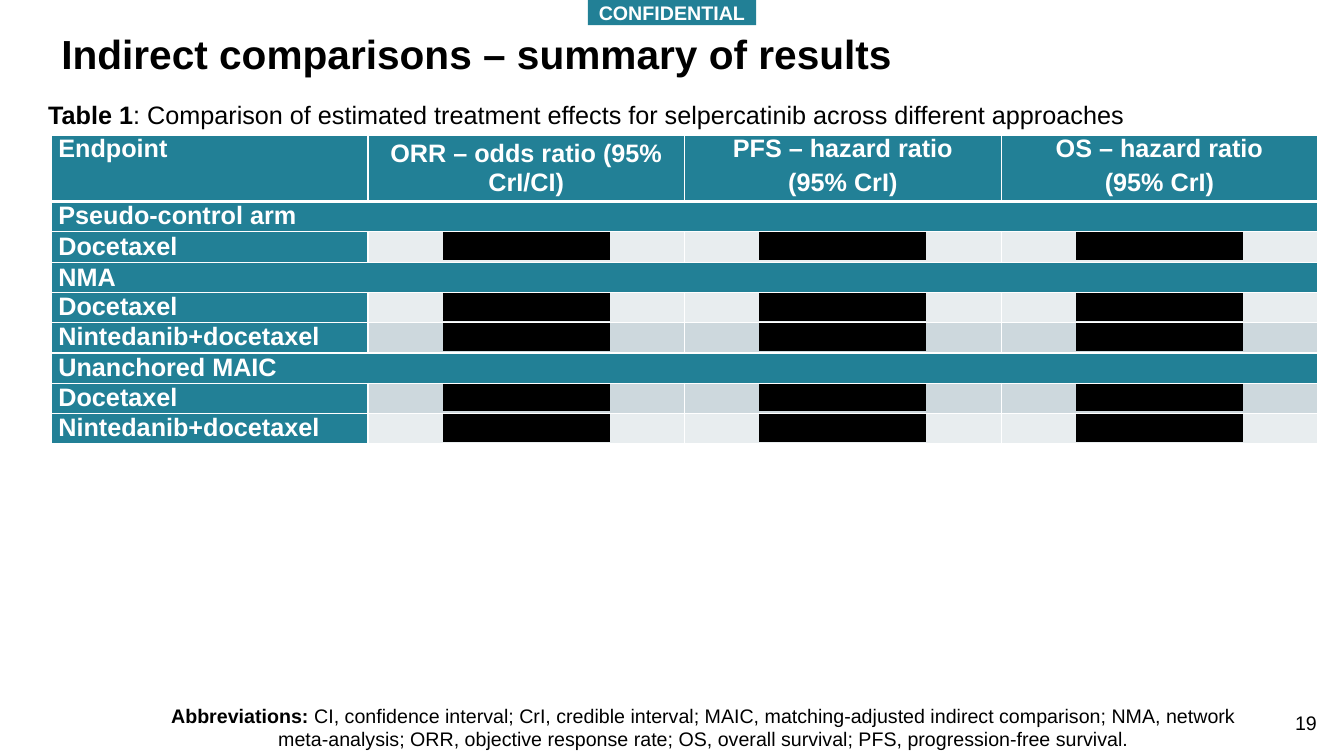
from dataclasses import dataclass

from lxml import etree
from pptx import Presentation
from pptx import util as u
from pptx.dml import color
from pptx.enum import shapes, text
from pptx.oxml import ns

COLORS = {
    "teal": "228096",
    "pale": "E8EDEF",
    "grey": "CDD8DD",
    "white": "FFFFFF",
    "black": "000000",
}
REDACTED = "*" * 17
ALIGN = text.PP_ALIGN
ANCHOR = text.MSO_ANCHOR


@dataclass
class Label:
    spans: list[tuple[str, bool]]
    left: float
    top: float
    width: float
    height: float
    size: float
    align: ALIGN = ALIGN.LEFT
    line_spacing: float = 1.0


@dataclass
class Row:
    heading: str
    band: str | None = None
    anchor: ANCHOR = ANCHOR.TOP


LABELS = [
    Label([("19", False)], 12.65, 7, 0.51, 0.4, 14, ALIGN.RIGHT),
    Label([("Indirect comparisons – summary of results", True)],
          0.51, 0.29, 12.3, 0.65, 29, line_spacing=0.9),
    Label([("Table 1", True),
           (": Comparison of estimated treatment effects for selpercatinib "
            "across different approaches", False)],
          0.38, 0.94, 12.83, 0.4, 18),
    Label([("Abbreviations: ", True),
           ("CI, confidence interval; CrI, credible interval; MAIC, matching-adjusted "
            "indirect comparison; NMA, network meta-analysis; ORR, objective response "
            "rate; OS, overall survival; PFS, progression-free survival.", False)],
          1.39, 6.93, 11.18, 0.57, 14, ALIGN.CENTER),
]
HEADERS = [
    ["Endpoint"],
    ["ORR – odds ratio (95% CrI/CI)"],
    ["PFS – hazard ratio", "(95% CrI)"],
    ["OS – hazard ratio", "(95% CrI)"],
]
ROWS = [
    Row("Pseudo-control arm"),
    Row("Docetaxel", "pale", ANCHOR.MIDDLE),
    Row("NMA", anchor=ANCHOR.MIDDLE),
    Row("Docetaxel", "pale"),
    Row("Nintedanib+docetaxel", "grey"),
    Row("Unanchored MAIC", anchor=ANCHOR.MIDDLE),
    Row("Docetaxel", "grey"),
    Row("Nintedanib+docetaxel", "pale"),
]


def rgb(name: str) -> color.RGBColor:
    return color.RGBColor.from_string(COLORS[name])


def add_span(para, words: str, *, size: float = 18, ink: str = "white",
             bold: bool = True, underline: bool = False,
             highlight: str | None = None) -> None:
    span = para.add_run()
    span.text = words
    font = span.font
    font.name, font.size, font.bold = "Arial", u.Pt(size), bold
    font.color.rgb = rgb(ink)
    if underline:
        font.underline = True
    if highlight:
        mark = etree.Element(ns.qn("a:highlight"))
        etree.SubElement(mark, ns.qn("a:srgbClr"), val=COLORS[highlight])
        span._r.get_or_add_rPr().find(ns.qn("a:solidFill")).addnext(mark)


def add_label(page, label: Label) -> None:
    box = page.shapes.add_textbox(u.Inches(label.left), u.Inches(label.top),
                                  u.Inches(label.width), u.Inches(label.height))
    box.text_frame.word_wrap = True
    para = box.text_frame.paragraphs[0]
    para.alignment = label.align
    para.line_spacing = label.line_spacing
    for words, bold in label.spans:
        add_span(para, words, size=label.size, ink="black", bold=bold)


def add_banner(page) -> None:
    box = page.shapes.add_shape(shapes.MSO_SHAPE.RECTANGLE, u.Inches(5.83), 0,
                                u.Inches(1.67), u.Inches(0.25))
    box.shadow.inherit = False
    box.fill.solid()
    box.fill.fore_color.rgb = rgb("teal")
    box.line.fill.background()
    box.text_frame.vertical_anchor = ANCHOR.MIDDLE
    para = box.text_frame.paragraphs[0]
    para.alignment = ALIGN.CENTER
    add_span(para, "CONFIDENTIAL", size=14)


def set_borders(cell, top: float, bottom: float) -> None:
    sides = {"lnL": 1, "lnR": 1, "lnT": top, "lnB": bottom}
    properties = cell._tc.get_or_add_tcPr()
    for index, (side, width) in enumerate(sides.items()):
        line = etree.Element(ns.qn(f"a:{side}"), w=str(u.Pt(width)))
        fill = etree.SubElement(line, ns.qn("a:solidFill"))
        etree.SubElement(fill, ns.qn("a:srgbClr"), val=COLORS["white"])
        properties.insert(index, line)


def fill_cell(cell, lines: list[str], fill: str, align: ALIGN, anchor: ANCHOR,
              **style) -> None:
    cell.margin_left = cell.margin_right = u.Inches(0.07)
    cell.margin_top = cell.margin_bottom = 0
    cell.vertical_anchor = anchor
    cell.fill.solid()
    cell.fill.fore_color.rgb = rgb(fill)
    frame = cell.text_frame
    for index, words in enumerate(lines):
        para = frame.add_paragraph() if index else frame.paragraphs[0]
        para.alignment = align
        para.space_before = u.Pt(2 if index else 0)
        para.space_after = u.Pt(2)
        add_span(para, words, **style)


def add_results(page) -> None:
    table = page.shapes.add_table(len(ROWS) + 1, len(HEADERS), u.Inches(0.51),
                                  u.Inches(1.34), u.Inches(12.56),
                                  u.Inches(3.06)).table
    for column in table.columns:
        column.width = u.Inches(3.14)
    for index, row in enumerate(table.rows):
        row.height = u.Inches(0.3 if index else 0.66)
        for cell in row.cells:
            set_borders(cell, 3 if index == 1 else 1, 1 if index else 3)
    for index, lines in enumerate(HEADERS):
        fill_cell(table.cell(0, index), lines, "teal",
                  ALIGN.CENTER if index else ALIGN.LEFT,
                  ANCHOR.MIDDLE if index == 1 else ANCHOR.TOP)
    for index, row in enumerate(ROWS, start=1):
        heading = table.cell(index, 0)
        fill_cell(heading, [row.heading], "teal", ALIGN.LEFT, row.anchor)
        if row.band is None:
            heading.merge(table.cell(index, len(HEADERS) - 1))
            continue
        for column in range(1, len(HEADERS)):
            fill_cell(table.cell(index, column), [REDACTED], row.band, ALIGN.CENTER,
                      ANCHOR.TOP, ink="black", bold=False, underline=True,
                      highlight="black")


def main() -> None:
    deck = Presentation()
    deck.slide_width, deck.slide_height = u.Inches(13.33), u.Inches(7.5)
    page = deck.slides.add_slide(deck.slide_layouts[6])
    for label in LABELS:
        add_label(page, label)
    add_results(page)
    add_banner(page)
    deck.save("out.pptx")


if __name__ == "__main__":
    main()
